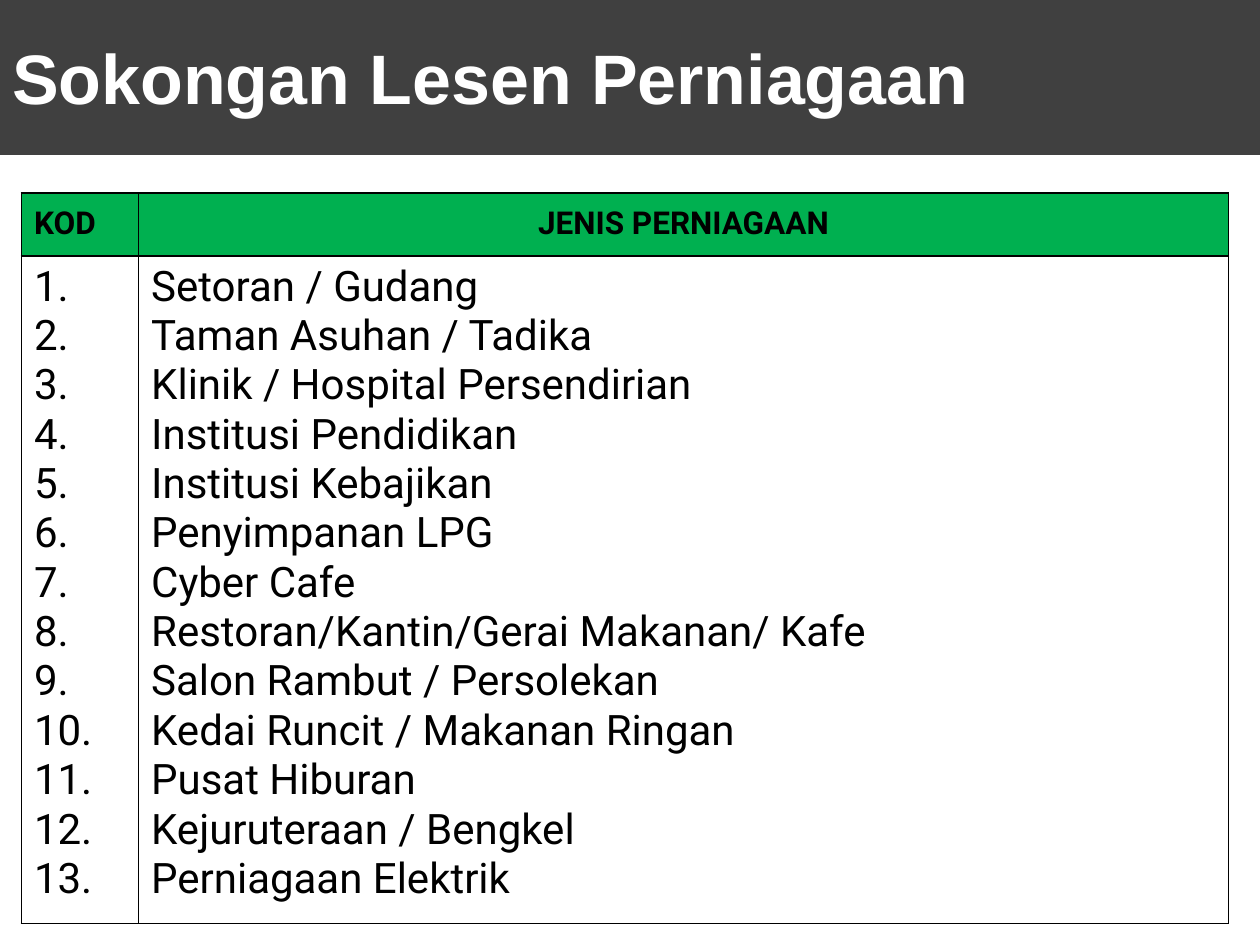
import dataclasses

import lxml.etree
import pptx
import pptx.dml.color
import pptx.enum.shapes
import pptx.enum.text
import pptx.oxml.ns
import pptx.util

ANCHOR = pptx.enum.text.MSO_ANCHOR
ALIGN = pptx.enum.text.PP_ALIGN
WIDTH, HEIGHT = 10, 7.5

BUSINESSES = [
    "Setoran / Gudang",
    "Taman Asuhan / Tadika",
    "Klinik / Hospital Persendirian",
    "Institusi Pendidikan",
    "Institusi Kebajikan",
    "Penyimpanan LPG",
    "Cyber Cafe",
    "Restoran/Kantin/Gerai Makanan/ Kafe",
    "Salon Rambut / Persolekan",
    "Kedai Runcit / Makanan Ringan",
    "Pusat Hiburan",
    "Kejuruteraan / Bengkel",
    "Perniagaan Elektrik",
]


@dataclasses.dataclass(frozen=True)
class Theme:
    band: str = "404040"
    title: str = "FFFFFF"
    header: str = "00B050"
    ink: str = "000000"
    title_font: str = "Arial"
    table_font: str = "Roboto"
    title_size: int = 40
    header_size: int = 18
    body_size: int = 24
    border: int = 1


THEME = Theme()


def rgb(value):
    return pptx.dml.color.RGBColor.from_string(value)


def write(tf, lines, font, size, color, bold=False, align=ALIGN.LEFT):
    """Put one paragraph per line, all in the same style."""
    for i, line in enumerate(lines):
        p = tf.add_paragraph() if i else tf.paragraphs[0]
        p.text = line
        p.alignment = align
        p.font.name = font
        p.font.size = pptx.util.Pt(size)
        p.font.bold = bold
        p.font.color.rgb = rgb(color)


def add_title_band(slide, text, height):
    s = slide.shapes.add_shape(
        pptx.enum.shapes.MSO_SHAPE.RECTANGLE,
        0, 0, pptx.util.Inches(WIDTH), pptx.util.Inches(height))
    s.shadow.inherit = False
    s.fill.solid()
    s.fill.fore_color.rgb = rgb(THEME.band)
    s.line.fill.background()
    tb = slide.shapes.add_textbox(
        0, pptx.util.Inches(0.02), pptx.util.Inches(WIDTH), pptx.util.Inches(1.17))
    tf = tb.text_frame
    tf.word_wrap = True
    tf.vertical_anchor = ANCHOR.MIDDLE
    write(tf, [text], THEME.title_font, THEME.title_size, THEME.title, bold=True)


def set_borders(cell):
    """Insert the four edge lines ahead of the cell's fill."""
    props = cell._tc.get_or_add_tcPr()
    qn = pptx.oxml.ns.qn
    for i, edge in enumerate(("a:lnL", "a:lnR", "a:lnT", "a:lnB")):
        line = lxml.etree.Element(qn(edge), w=str(pptx.util.Pt(THEME.border)))
        fill = lxml.etree.SubElement(line, qn("a:solidFill"))
        lxml.etree.SubElement(fill, qn("a:srgbClr"), val=THEME.ink)
        props.insert(i, line)


def fill_cell(cell, lines, header=False, align=ALIGN.LEFT):
    if header:
        cell.fill.solid()
        cell.fill.fore_color.rgb = rgb(THEME.header)
    else:
        cell.fill.background()
    cell.vertical_anchor = ANCHOR.MIDDLE if header else ANCHOR.TOP
    size = THEME.header_size if header else THEME.body_size
    write(cell.text_frame, lines, THEME.table_font, size, THEME.ink, header, align)
    set_borders(cell)


def add_business_table(slide, left, top, columns, rows):
    frame = slide.shapes.add_table(
        len(rows), len(columns),
        *map(pptx.util.Inches, (left, top, sum(columns), sum(rows))))
    table = frame.table
    for column, width in zip(table.columns, columns):
        column.width = pptx.util.Inches(width)
    for row, height in zip(table.rows, rows):
        row.height = pptx.util.Inches(height)

    # Heading row
    fill_cell(table.cell(0, 0), ["KOD"], header=True)
    fill_cell(table.cell(0, 1), ["JENIS PERNIAGAAN"], header=True, align=ALIGN.CENTER)

    # Codes beside business types
    codes = [f"{n}." for n in range(1, len(BUSINESSES) + 1)]
    fill_cell(table.cell(1, 0), codes)
    fill_cell(table.cell(1, 1), BUSINESSES)


def main():
    prs = pptx.Presentation()
    prs.slide_width = pptx.util.Inches(WIDTH)
    prs.slide_height = pptx.util.Inches(HEIGHT)
    slide = prs.slides.add_slide(prs.slide_layouts[6])
    add_title_band(slide, "Sokongan Lesen Perniagaan", height=1.23)
    add_business_table(slide, 0.17, 1.53, columns=(0.93, 8.65), rows=(0.5, 5.3))
    prs.save("out.pptx")


if __name__ == "__main__":
    main()
